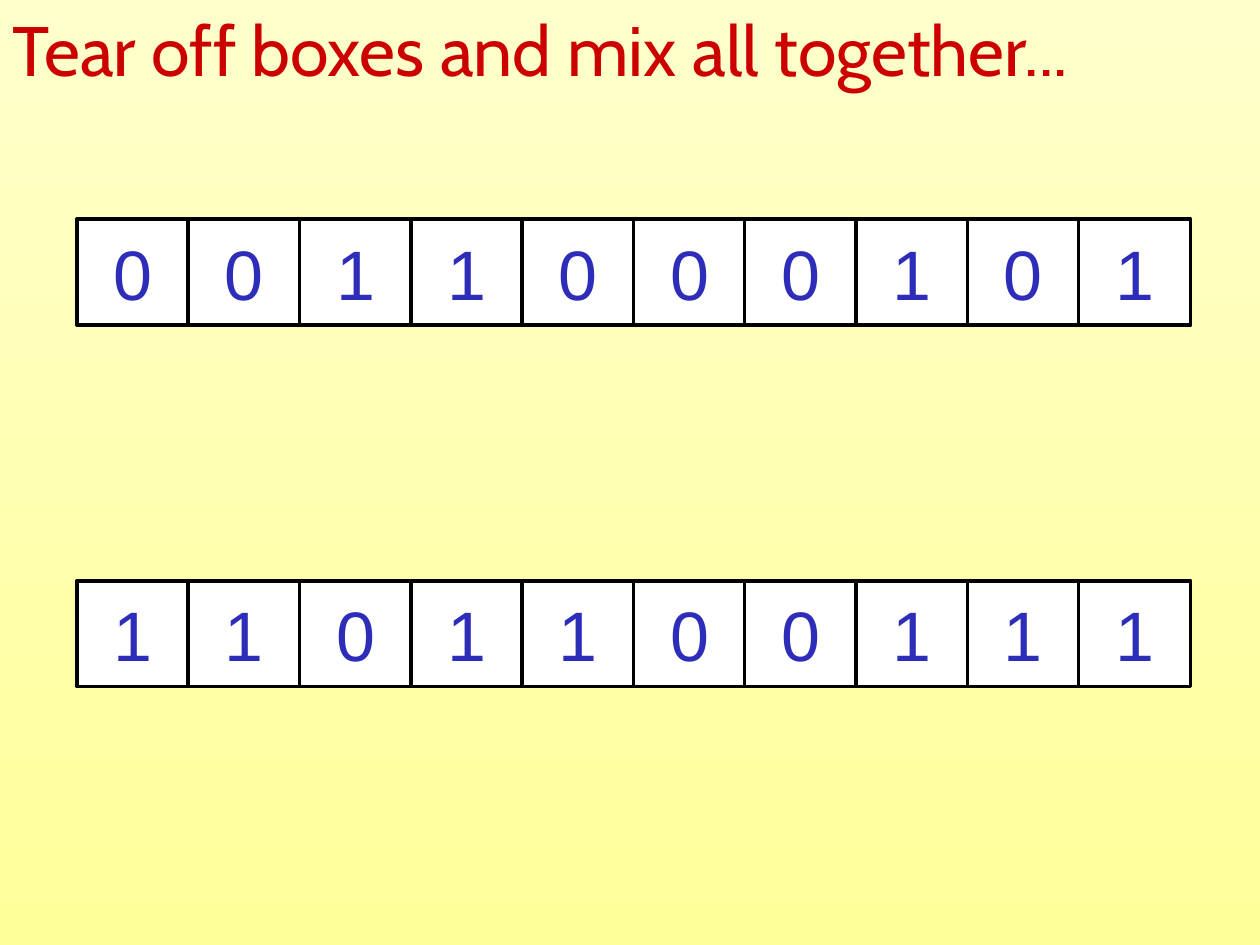
from dataclasses import dataclass

from pptx import Presentation
from pptx import util as u
from pptx.dml.color import RGBColor
from pptx.enum import shapes, text


@dataclass(frozen=True)
class Theme:
    bg_top: str = "FFFFCC"
    bg_bottom: str = "FFFF99"
    title: str = "CC0000"
    digit: str = "2D2DB9"
    box: str = "FFFFFF"
    border: str = "000000"
    title_font: str = "Cabin"
    digit_font: str = "Arial"
    size: int = 40
    border_width: int = 2


def write(tf, content, *, font, size, color, align, anchor):
    tf.vertical_anchor = anchor
    p = tf.paragraphs[0]
    p.alignment = align
    r = p.add_run()
    r.text = content
    r.font.name = font
    r.font.size = u.Pt(size)
    r.font.color.rgb = RGBColor.from_string(color)


class Deck:
    def __init__(self, theme):
        self.theme = theme
        self.prs = Presentation()
        self.prs.slide_width = u.Inches(10)
        self.prs.slide_height = u.Inches(7.5)
        self.s = None

    def add_slide(self):
        self.s = self.prs.slides.add_slide(self.prs.slide_layouts[5])
        fill = self.s.background.fill
        fill.gradient()
        fill.gradient_angle = 270
        for stop, color in zip(fill.gradient_stops,
                               (self.theme.bg_top, self.theme.bg_bottom)):
            stop.color.rgb = RGBColor.from_string(color)

    def title(self, content):
        t = self.theme
        sp = self.s.shapes.title
        sp.left, sp.top = u.Inches(0), u.Inches(0)
        sp.width, sp.height = u.Inches(10), u.Inches(0.77)
        tf = sp.text_frame
        tf.word_wrap = True
        tf.auto_size = text.MSO_AUTO_SIZE.SHAPE_TO_FIT_TEXT
        write(tf, content, font=t.title_font, size=t.size, color=t.title,
              align=text.PP_ALIGN.LEFT, anchor=text.MSO_ANCHOR.TOP)

    def box(self, digit, x, y, w, h):
        t = self.theme
        sp = self.s.shapes.add_shape(
            shapes.MSO_SHAPE.RECTANGLE,
            u.Inches(x), u.Inches(y), u.Inches(w), u.Inches(h))
        sp.shadow.inherit = False
        sp.fill.solid()
        sp.fill.fore_color.rgb = RGBColor.from_string(t.box)
        sp.line.color.rgb = RGBColor.from_string(t.border)
        sp.line.width = u.Pt(t.border_width)
        write(sp.text_frame, digit, font=t.digit_font, size=t.size,
              color=t.digit, align=text.PP_ALIGN.CENTER,
              anchor=text.MSO_ANCHOR.MIDDLE)

    def strip(self, digits, y, x=0.61, right=9.45, w=0.89, h=0.84):
        """Spread one box per digit evenly from x to right."""
        pitch = (right - w - x) / (len(digits) - 1)
        for i, digit in enumerate(digits):
            self.box(digit, x + i * pitch, y, w, h)


def main():
    deck = Deck(Theme())
    deck.add_slide()
    deck.title("Tear off boxes and mix all together...")
    deck.strip("0011000101", y=1.74)
    deck.strip("1101100111", y=4.61)
    deck.prs.save("out.pptx")


if __name__ == "__main__":
    main()
